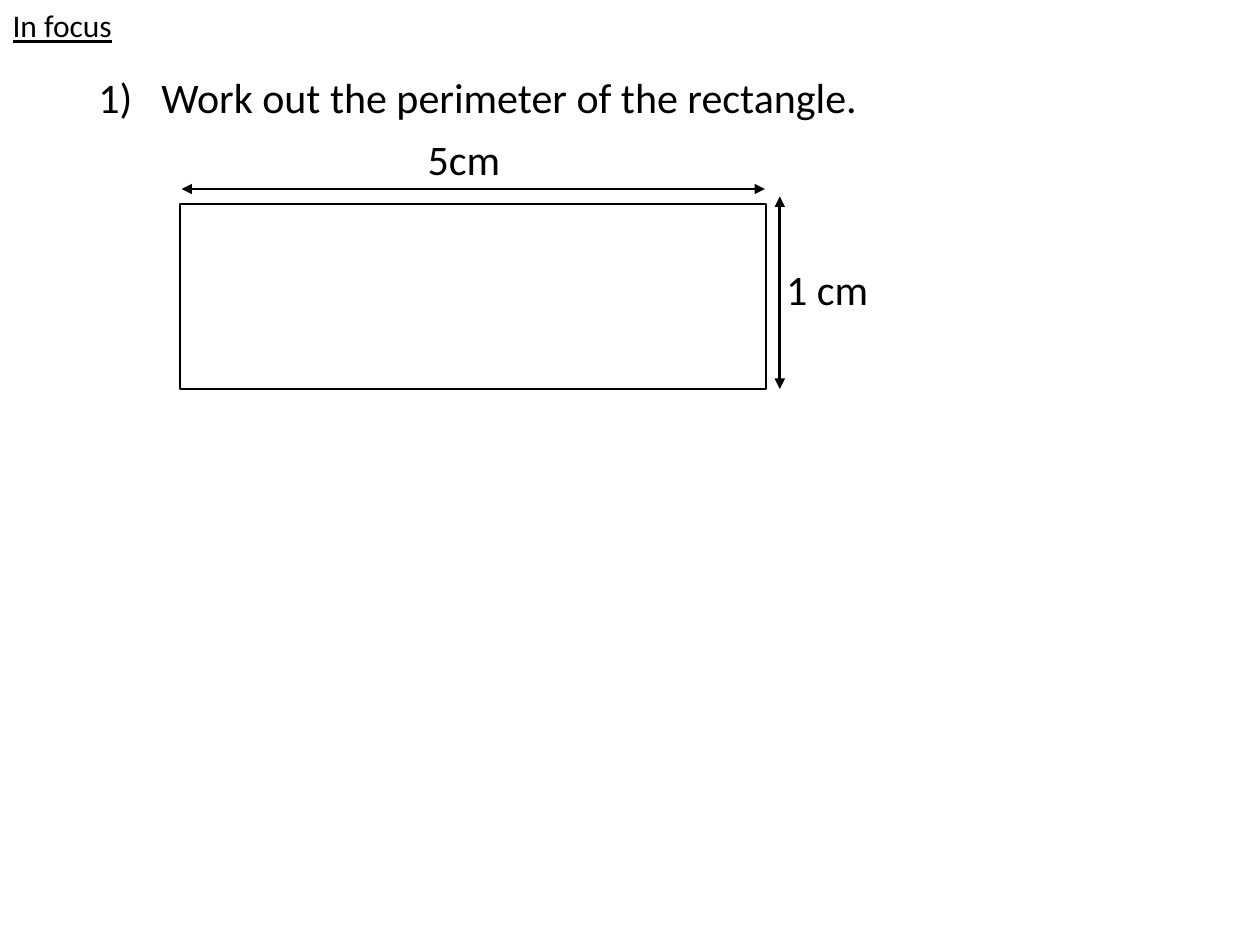
from dataclasses import dataclass

from lxml.etree import SubElement
from pptx import Presentation
from pptx.dml.color import RGBColor
from pptx.enum.shapes import MSO_CONNECTOR, MSO_SHAPE
from pptx.enum.text import MSO_ANCHOR, MSO_AUTO_SIZE, PP_ALIGN
from pptx.oxml.ns import qn
from pptx.slide import Slide
from pptx.text.text import TextFrame
from pptx.util import Cm, Pt

BLACK = "000000"
FONT = "Calibri"
LINE_WIDTH = 1.5


@dataclass(frozen=True)
class Box:
    """Place and size in centimetres."""
    left: float
    top: float
    width: float
    height: float

    @property
    def right(self) -> float:
        """Right edge."""
        return self.left + self.width

    @property
    def bottom(self) -> float:
        """Bottom edge."""
        return self.top + self.height

    def lengths(self) -> tuple[Cm, Cm, Cm, Cm]:
        """Left, top, width and height as slide lengths."""
        return Cm(self.left), Cm(self.top), Cm(self.width), Cm(self.height)


@dataclass(frozen=True)
class Dimension:
    """A double-headed arrow with its measurement."""
    start: tuple[float, float]
    end: tuple[float, float]
    measurement: str
    label: Box


RECTANGLE = Box(3.63, 4.11, 11.81, 3.73)
DIMENSIONS = (
    Dimension((RECTANGLE.left + 0.03, 3.81), (RECTANGLE.right - 0.02, 3.81),
              "5cm", Box(8.37, 2.57, 3.43, 1.27)),
    Dimension((15.72, RECTANGLE.bottom), (15.72, 3.96),
              "1 cm", Box(15.6, 5.18, 3.43, 1.27)),
)


def colour(code: str) -> RGBColor:
    """Turn a hex string into a colour."""
    return RGBColor.from_string(code)


def write(frame: TextFrame, wording: str, size: float = 24,
          underline: bool = False, wrap: bool = True) -> None:
    """Write one left-aligned line at the top of a frame."""
    frame.word_wrap = wrap
    frame.auto_size = MSO_AUTO_SIZE.NONE
    frame.vertical_anchor = MSO_ANCHOR.TOP
    line = frame.paragraphs[0]
    line.alignment = PP_ALIGN.LEFT
    line.space_before = Pt(0)
    run = line.add_run()
    run.text = wording
    run.font.name = FONT
    run.font.size = Pt(size)
    run.font.underline = underline
    run.font.color.rgb = colour(BLACK)


def place(placeholder, box: Box) -> None:
    """Move a placeholder to a box."""
    (placeholder.left, placeholder.top,
     placeholder.width, placeholder.height) = box.lengths()


def number(frame: TextFrame) -> None:
    """Number the first paragraph as 1) with a hanging indent."""
    properties = frame.paragraphs[0]._p.get_or_add_pPr()
    properties.set("marL", str(Cm(1.27)))
    properties.set("indent", str(-Cm(1.27)))
    SubElement(properties, qn("a:buFont"), typeface="+mj-lt")
    SubElement(properties, qn("a:buAutoNum"), type="arabicParenR")


def draw_rectangle(slide: Slide, box: Box) -> None:
    """Draw the outlined rectangle."""
    rectangle = slide.shapes.add_shape(MSO_SHAPE.RECTANGLE, *box.lengths())
    rectangle.shadow.inherit = False
    rectangle.fill.background()
    rectangle.line.color.rgb = colour(BLACK)
    rectangle.line.width = Pt(LINE_WIDTH)


def draw_dimension(slide: Slide, dimension: Dimension) -> None:
    """Draw a dimension arrow and its label."""
    ends = (Cm(value) for value in dimension.start + dimension.end)
    arrow = slide.shapes.add_connector(MSO_CONNECTOR.STRAIGHT, *ends)
    arrow.line.color.rgb = colour(BLACK)
    arrow.line.width = Pt(LINE_WIDTH)
    outline = arrow.line._get_or_add_ln()
    for tip in ("a:headEnd", "a:tailEnd"):
        SubElement(outline, qn(tip), type="triangle")
    SubElement(arrow._element.spPr, qn("a:effectLst"))
    label = slide.shapes.add_textbox(*dimension.label.lengths())
    write(label.text_frame, dimension.measurement)


def main() -> None:
    """Build the perimeter slide."""
    deck = Presentation()
    deck.slide_width, deck.slide_height = Cm(25.4), Cm(19.05)
    slide = deck.slides.add_slide(deck.slide_layouts[1])

    heading, question = slide.shapes.title, slide.placeholders[1]
    place(heading, Box(0, 0, 2.54, 1.02))
    write(heading.text_frame, "In focus", size=18, underline=True, wrap=False)
    place(question, Box(1.73, 1.32, 21.79, 12.07))
    number(question.text_frame)
    write(question.text_frame, "Work out the perimeter of the rectangle.")

    draw_rectangle(slide, RECTANGLE)
    for dimension in DIMENSIONS:
        draw_dimension(slide, dimension)
    deck.save("out.pptx")


if __name__ == "__main__":
    main()
